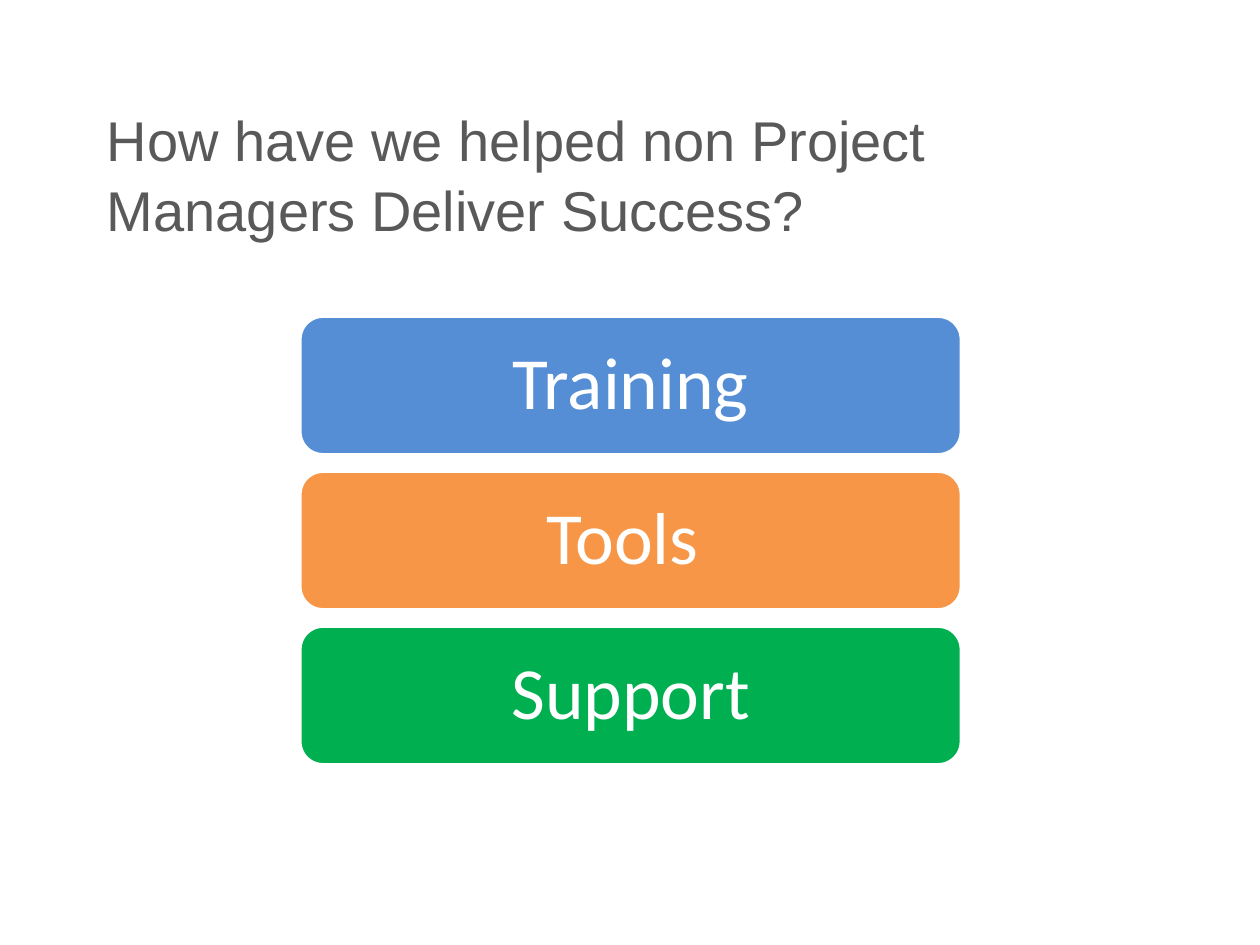
"""Build a slide with a title and three stacked coloured bars."""
from pptx import Presentation
from pptx import util as u
from pptx.dml.color import RGBColor
from pptx.enum import shapes, text


def color(value):
    return RGBColor.from_string(value)


def add_span(para, words, font, size, ink):
    span = para.add_run()
    span.text = words
    span.font.name = font
    span.font.size = u.Pt(size)
    span.font.color.rgb = color(ink)


deck = Presentation()
deck.slide_width = u.Inches(10)
deck.slide_height = u.Inches(7.5)
page = deck.slides.add_slide(deck.slide_layouts[6])

title = page.shapes.add_textbox(u.Inches(0.75), u.Inches(0.75), u.Inches(8.08), u.Inches(0.8))
title.text_frame.word_wrap = True
title.text_frame.margin_top = u.Inches(0.07)
para = title.text_frame.paragraphs[0]
para.line_spacing = 1.04
add_span(para, "How have we helped non Project Managers Deliver Success?", "Arial", 32, "595959")

bars = [("Training", "558ED5"), ("Tools ", "F79646"), ("Support", "00B050")]
first_top, pitch = 2.51, 1.23
for index, (label, fill) in enumerate(bars):
    bar = page.shapes.add_shape(
        shapes.MSO_SHAPE.ROUNDED_RECTANGLE,
        u.Inches(2.38), u.Inches(first_top + index * pitch), u.Inches(5.25), u.Inches(1.1))
    bar.shadow.inherit = False
    bar.fill.solid()
    bar.fill.fore_color.rgb = color(fill)
    bar.line.color.rgb = color("FFFFFF")
    bar.line.width = u.Pt(2)
    frame = bar.text_frame
    frame.word_wrap = True
    frame.vertical_anchor = text.MSO_ANCHOR.MIDDLE
    frame.margin_left = frame.margin_right = u.Inches(0.17)
    frame.margin_top = frame.margin_bottom = u.Inches(0.17)
    para = frame.paragraphs[0]
    para.alignment = text.PP_ALIGN.CENTER
    para.line_spacing = 0.9
    add_span(para, label, "Calibri", 42, "FFFFFF")

deck.save("out.pptx")
